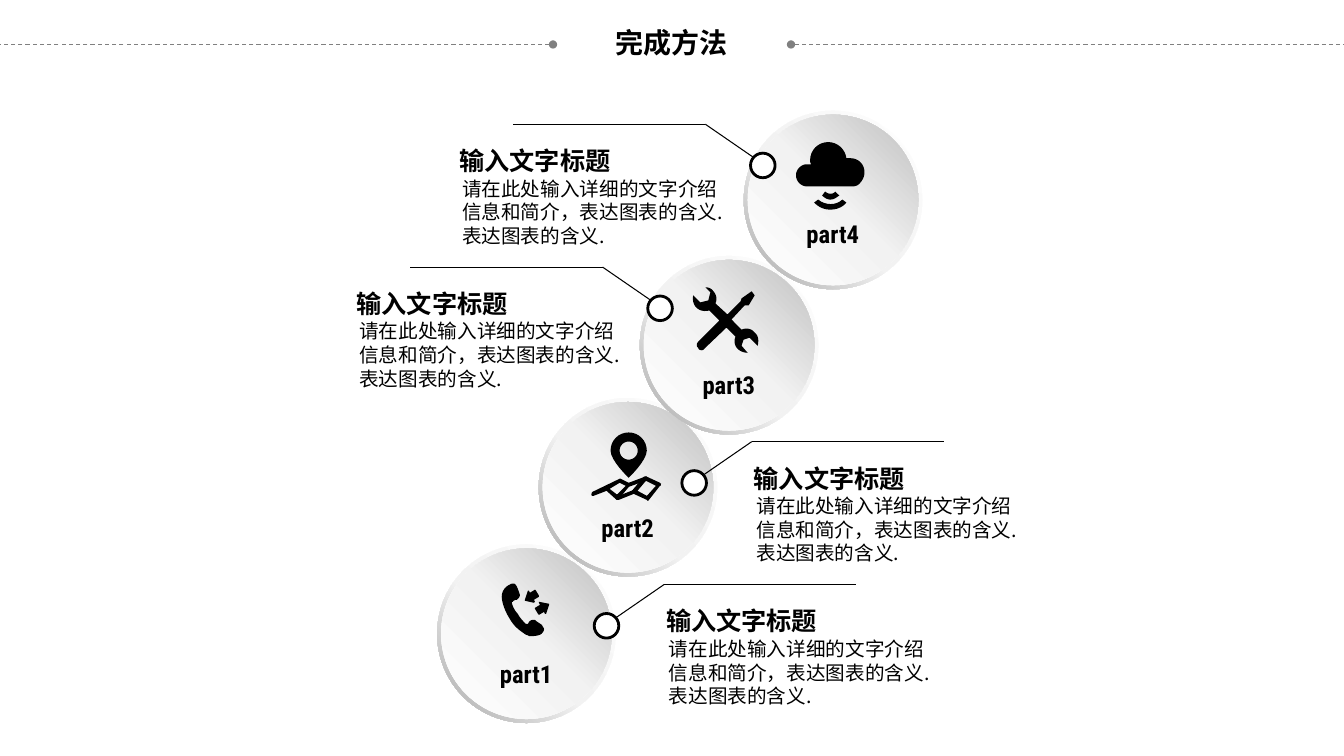
from pptx import Presentation
from pptx.dml.color import RGBColor
from pptx.enum.dml import MSO_LINE
from pptx.enum.shapes import MSO_CONNECTOR, MSO_SHAPE
from pptx.enum.text import MSO_ANCHOR, PP_ALIGN
from pptx.oxml import parse_xml
from pptx.oxml.ns import nsdecls
from pptx.util import Cm, Pt

COLORS = {
    "black": "000000", "white": "FFFFFF", "line": "808080",
    "pale": "F2F2F2", "rim": "A6A6A6", "face": "BFBFBF",
}
HAN = "Noto Sans CJK SC"
LATIN = "Roboto Condensed"
HEAD = "输入文字标题"
BODY = "请在此处输入详细的文字介绍信息和简介，表达图表的含义.表达图表的含义."

# Icon outlines on a grid of 0.0254 cm: pairs are corners, sixes are curves
GRID = 0.0254
CLOUD = [
    [[(858, 171), (858, 163, 852, 157, 844, 157), (840, 157),
      (839, 148, 831, 141, 822, 141), (812, 141, 804, 149, 804, 159),
      (804, 160, 804, 161, 805, 163), (801, 163),
      (795, 163, 790, 168, 790, 174), (790, 180, 795, 185, 801, 185),
      (846, 185), (849, 185, 852, 184, 854, 181),
      (856, 179, 858, 175, 858, 171)]],
    [[(824, 208), (818, 208, 813, 206, 808, 201), (812, 198),
      (819, 204, 830, 204, 836, 198), (840, 201),
      (836, 206, 830, 208, 824, 208)]],
    [[(824, 198), (821, 198, 818, 196, 816, 194), (819, 190),
      (822, 193, 827, 193, 829, 190), (833, 194),
      (830, 196, 828, 198, 824, 198)]],
]
TOOLS = [
    [[(749, 330), (746, 326, 741, 325, 736, 327), (726, 317), (739, 303),
      (743, 303), (749, 293), (746, 289), (736, 296), (735, 299), (722, 312),
      (710, 301), (712, 297, 711, 292, 708, 289),
      (706, 286, 703, 285, 700, 285), (705, 290), (703, 298), (695, 300),
      (688, 293), (687, 297, 688, 302, 691, 305),
      (695, 309, 700, 309, 704, 308), (714, 318), (693, 339),
      (691, 341, 691, 344, 693, 345), (693, 346),
      (695, 348, 698, 348, 699, 346), (721, 325), (730, 334),
      (728, 338, 729, 343, 732, 346), (735, 349, 739, 350, 742, 350),
      (736, 343), (738, 337), (744, 335), (752, 343),
      (753, 338, 753, 333, 749, 330)]],
]
MAP = [
    [[(624, 429), (614, 429, 606, 437, 606, 447),
      (606, 457, 624, 474, 624, 474), (624, 474, 642, 457, 642, 447),
      (642, 437, 634, 429, 624, 429)],
     [(624, 456), (619, 456, 615, 452, 615, 447),
      (615, 442, 619, 438, 624, 438), (629, 438, 633, 442, 633, 447),
      (633, 452, 629, 456, 624, 456)]],
    [[(643, 497), (642, 496), (629, 490), (614, 496), (612, 496), (602, 487),
      (589, 492), (588, 492, 587, 492, 587, 491),
      (587, 490, 587, 489, 588, 488), (615, 475), (616, 475), (624, 479),
      (640, 473), (642, 473), (655, 479), (656, 480),
      (656, 481, 656, 482, 655, 482), (644, 496)],
     [(630, 486), (631, 486), (642, 492), (651, 482), (641, 477), (624, 483),
      (623, 483), (615, 479), (605, 485), (614, 492), (629, 486)]],
    [[(630, 489), (628, 489), (627, 488, 627, 487, 628, 486), (639, 473),
      (640, 473, 641, 472, 642, 473), (643, 474, 643, 475, 642, 476),
      (631, 489)]],
    [[(613, 495), (611, 495), (611, 492), (623, 480), (625, 479),
      (626, 481, 626, 482, 625, 482), (615, 494)]],
]
PHONE = [
    [[(532, 616), (531, 615), (529, 615), (528, 615, 527, 615, 525, 617),
      (524, 619), (522, 619), (519, 616, 516, 613, 514, 609),
      (511, 606, 509, 602, 508, 598), (508, 597, 508, 597, 509, 597),
      (509, 596, 512, 595, 512, 595), (513, 595),
      (514, 594, 516, 593, 516, 590), (515, 587, 514, 584, 513, 582),
      (512, 580, 511, 579, 510, 579), (508, 579, 507, 579, 506, 580),
      (506, 580, 498, 583, 498, 592), (498, 594, 499, 603, 506, 614),
      (510, 621, 515, 625, 521, 629), (522, 630, 524, 630, 525, 631),
      (527, 631, 528, 631, 529, 631), (534, 631, 538, 629, 538, 628),
      (539, 627, 540, 626, 540, 624), (540, 623, 538, 621, 538, 620),
      (535, 618, 532, 616, 532, 616)],
     [(521, 596), (530, 598), (531, 597), (530, 595), (535, 592), (535, 591),
      (532, 586), (531, 585), (526, 588), (525, 586), (524, 586), (521, 595)],
     [(545, 599), (535, 597), (535, 598), (536, 600), (531, 603), (531, 604),
      (534, 609), (535, 610), (540, 607), (541, 609), (542, 609), (545, 600)]],
]
# Label, ring corner, label drop, dot centre, side of the text, icon
STEPS = [
    ("part1", 11.02, 13.72, 2.77, 15.29, 15.77, 1, PHONE),
    ("part2", 13.58, 10.03, 2.77, 17.5, 12.17, 1, MAP),
    ("part3", 16.13, 6.45, 2.74, 16.64, 7.77, -1, TOOLS),
    ("part4", 18.75, 2.79, 2.59, 19.23, 4.17, -1, CLOUD),
]


def rgb(name):
    return RGBColor.from_string(COLORS[name])


def write(slide, text, x, y, w, h, size, font=HAN, bold=False,
          align=PP_ALIGN.LEFT, pitch=None, anchor=MSO_ANCHOR.TOP):
    frame = slide.shapes.add_textbox(Cm(x), Cm(y), Cm(w), Cm(h)).text_frame
    frame.word_wrap = True
    frame.vertical_anchor = anchor
    para = frame.paragraphs[0]
    para.text = text
    para.alignment = align
    if pitch:
        para.line_spacing = Pt(pitch)
    for run in para.runs:
        run.font.size = Pt(size)
        run.font.bold = bold
        run.font.color.rgb = rgb("black")
        run.font.name = font
        run.font._element.append(
            parse_xml(f'<a:ea {nsdecls("a")} typeface="{font}"/>'))


def rule(slide, x1, y1, x2, y2, color="black"):
    line = slide.shapes.add_connector(
        MSO_CONNECTOR.STRAIGHT, Cm(x1), Cm(y1), Cm(x2), Cm(y2))
    line.line.color.rgb = rgb(color)
    line.line.width = Pt(0.75)
    line.element.spPr.append(parse_xml(f'<a:effectLst {nsdecls("a")}/>'))
    return line


def title_rule(slide, x1, x2):
    line = rule(slide, x1, 1.12, x2, 1.12, "line").line
    line.dash_style = MSO_LINE.DASH
    line._ln.append(parse_xml(f'<a:headEnd {nsdecls("a")} type="oval"/>'))


def disc(slide, kind, x, y, size, mid, end, angle):
    shape = slide.shapes.add_shape(kind, Cm(x), Cm(y), Cm(size), Cm(size))
    shape.shadow.inherit = False
    stops = "".join(
        f'<a:gs pos="{pos * 1000}"><a:srgbClr val="{COLORS[name]}"/></a:gs>'
        for pos, name in ((0, "white"), (mid, "pale"), (100, end)))
    shape.element.spPr.insert(2, parse_xml(
        f'<a:gradFill {nsdecls("a")} rotWithShape="1"><a:gsLst>{stops}</a:gsLst>'
        f'<a:lin ang="{angle * 60000}" scaled="0"/></a:gradFill>'))
    shape.line.fill.background()
    return shape


def trace(steps):
    """Turn corners and curves into points in EMU."""
    dots = [steps[0]]
    for step in steps[1:]:
        if len(step) == 2:
            dots.append(step)
            continue
        ends = [dots[-1], step[:2], step[2:4], step[4:]]
        for i in range(1, 9):
            t = i / 8
            mix = ((1 - t) ** 3, 3 * t * (1 - t) ** 2,
                   3 * t * t * (1 - t), t ** 3)
            dots.append(tuple(sum(m * p[k] for m, p in zip(mix, ends))
                              for k in (0, 1)))
    return [(Cm(x * GRID), Cm(y * GRID)) for x, y in dots]


def icon(slide, parts):
    for part in parts:
        first, *rest = [trace(steps) for steps in part]
        pen = slide.shapes.build_freeform(*first[0], scale=1.0)
        pen.add_line_segments(first[1:], close=True)
        for dots in rest:
            pen.move_to(*dots[0])
            pen.add_line_segments(dots[1:], close=True)
        shape = pen.convert_to_shape()
        shape.shadow.inherit = False
        shape.fill.solid()
        shape.fill.fore_color.rgb = rgb("black")
        shape.line.fill.background()


def badge(slide, label, x, y, drop, parts):
    ring = disc(slide, MSO_SHAPE.DONUT, x, y, 4.5, 55, "rim", 135)
    ring.adjustments[0] = 0.049
    disc(slide, MSO_SHAPE.OVAL, x + 0.1, y + 0.1, 4.3, 51, "face", 315)
    write(slide, label, x + 0.91, y + drop, 2.67, 0.97, 17.6, LATIN, True,
          PP_ALIGN.CENTER)
    icon(slide, parts)


def callout(slide, x, y, side):
    dot = slide.shapes.add_shape(
        MSO_SHAPE.OVAL, Cm(x - 0.31), Cm(y - 0.31), Cm(0.62), Cm(0.62))
    dot.shadow.inherit = False
    dot.fill.solid()
    dot.fill.fore_color.rgb = rgb("white")
    dot.line.color.rgb = rgb("black")
    dot.line.width = Pt(2)
    bend = x + side * 1.45
    rule(slide, x + side * 0.23, y - 0.2, bend, y - 1.04)
    rule(slide, bend, y - 1.04, x + side * 6.3, y - 1.04)
    left = x + (1.32 if side > 0 else -7.83)
    write(slide, BODY, left, y + 0.15, 6.95, 2.2, 14, pitch=16.9)
    write(slide, HEAD, left - 0.07, y - 0.63, 4.8, 0.8, 18, bold=True,
          pitch=21.6)


def main():
    deck = Presentation()
    deck.slide_width, deck.slide_height = Cm(33.88), Cm(19.05)
    slide = deck.slides.add_slide(deck.slide_layouts[6])

    # Title between two dashed lines
    title_rule(slide, 13.94, 0)
    title_rule(slide, 19.94, 33.88)
    write(slide, "完成方法", 13.74, 0.41, 6.4, 1.32, 20, bold=True,
          align=PP_ALIGN.CENTER, anchor=MSO_ANCHOR.MIDDLE)

    # Rising chain of badges, then their notes
    for label, x, y, drop, _, _, _, parts in STEPS:
        badge(slide, label, x, y, drop, parts)
    for *_, x, y, side, _ in STEPS:
        callout(slide, x, y, side)

    deck.save("out.pptx")


if __name__ == "__main__":
    main()
